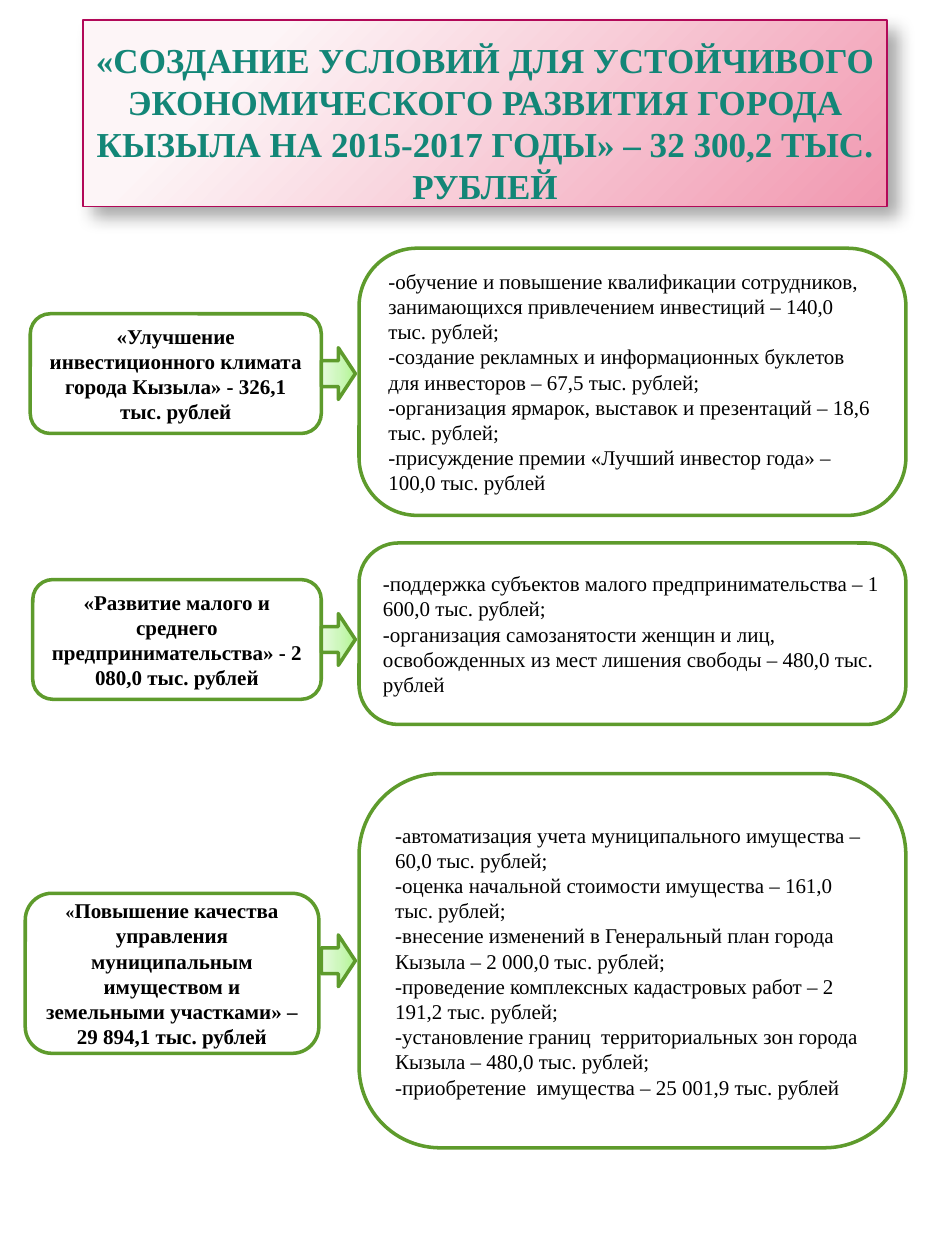
from dataclasses import dataclass

from lxml.etree import fromstring
from pptx import Presentation
from pptx.dml.color import RGBColor
from pptx.enum.shapes import MSO_SHAPE
from pptx.enum.text import MSO_ANCHOR, MSO_AUTO_SIZE, PP_ALIGN
from pptx.oxml.ns import nsdecls
from pptx.util import Inches, Pt


@dataclass(frozen=True)
class Theme:
    """Colours, type sizes and line widths of the slide."""
    font: str = "Times New Roman"
    title_size: float = 20
    body_size: float = 12
    quote_size: float = 10.5
    title_color: str = "138677"
    title_border: str = "B20858"
    text_color: str = "000000"
    border: str = "5E9B2C"
    background: str = "FFFFFF"
    border_width: float = 2
    title_border_width: float = 0.75
    title_stops: tuple = ((20, "FDF5F7"), (100, "F198B0"))
    arrow_stops: tuple = ((0, "B2F592"), (50, "CEF7BD"), (100, "E7FADF"))


@dataclass(frozen=True)
class Program:
    """One row: a summary box, an arrow and a box of details, in percent."""
    summary: str
    summary_box: tuple
    arrow_center: float
    detail_top: float
    detail_height: float
    details: tuple


THEME = Theme()
SLIDE_WIDTH, SLIDE_HEIGHT = Inches(7.5), Inches(10)
TITLE = ("«СОЗДАНИЕ УСЛОВИЙ ДЛЯ УСТОЙЧИВОГО ЭКОНОМИЧЕСКОГО РАЗВИТИЯ ГОРОДА "
         "КЫЗЫЛА НА 2015-2017 ГОДЫ» – 32 300,2 ТЫС. РУБЛЕЙ")
TITLE_BOX = (8.8, 1.6, 85.07, 14.8)
DETAIL_LEFT, DETAIL_WIDTH = 38, 57.87
ARROW_LEFT, ARROW_WIDTH, ARROW_HEIGHT = 33.07, 5.47, 2.7
PROGRAMS = (
    Program(
        "«Улучшение инвестиционного климата города Кызыла» - 326,1 тыс. рублей",
        (3.2, 24.9, 30.8, 9.5), 29.65, 19.7, 21.2,
        ("-обучение и повышение квалификации сотрудников, занимающихся "
         "привлечением инвестиций – 140,0 тыс. рублей;",
         "-создание рекламных и информационных буклетов для инвесторов – 67,5 тыс. рублей;",
         "-организация ярмарок, выставок и презентаций – 18,6 тыс. рублей;",
         "-присуждение премии «Лучший инвестор года» – 100,0 тыс. рублей")),
    Program(
        "«Развитие малого и среднего предпринимательства» - 2 080,0 тыс. рублей",
        (3.47, 46, 30.53, 9.5), 50.75, 43.1, 14.4,
        ("-поддержка субъектов малого предпринимательства – 1 600,0 тыс. рублей;",
         "-организация самозанятости женщин и лиц, освобожденных из мест "
         "лишения свободы – 480,0 тыс. рублей")),
    Program(
        "Повышение качества управления муниципальным имуществом и земельными "
        "участками» – 29 894,1 тыс. рублей",
        (2.67, 70.9, 31.07, 12.7), 76.25, 61.4, 29.7,
        ("-автоматизация учета муниципального имущества – 60,0 тыс. рублей;",
         "-оценка начальной стоимости имущества – 161,0 тыс. рублей;",
         "-внесение изменений в Генеральный план города Кызыла – 2 000,0 тыс. рублей;",
         "-проведение комплексных кадастровых работ – 2 191,2 тыс. рублей;",
         "-установление границ  территориальных зон города Кызыла – 480,0 тыс. рублей;",
         "-приобретение  имущества – 25 001,9 тыс. рублей")),
)


def place(box):
    """Turn percentages of the slide into left, top, width and height."""
    sides = (SLIDE_WIDTH, SLIDE_HEIGHT) * 2
    return [round(side * share / 100) for side, share in zip(sides, box)]


def set_border(shape, color, width):
    """Give the shape a solid outline."""
    shape.line.color.rgb = RGBColor.from_string(color)
    shape.line.width = Pt(width)


def set_gradient(shape, stops, direction):
    """Fill the shape with a gradient of the given stops and direction."""
    marks = "".join(
        f'<a:gs pos="{position * 1000}"><a:srgbClr val="{color}"/></a:gs>'
        for position, color in stops)
    gradient = fromstring(
        f'<a:gradFill {nsdecls("a")} rotWithShape="1">'
        f"<a:gsLst>{marks}</a:gsLst>{direction}</a:gradFill>")
    shape.fill.background()
    properties = shape.element.spPr
    properties.replace(properties.find("{*}noFill"), gradient)


def format_run(run, size, color, bold):
    """Set the typeface, size, colour and weight of a run."""
    run.font.name = THEME.font
    run.font.size = Pt(size)
    run.font.bold = bold
    run.font.color.rgb = RGBColor.from_string(color)


def format_text(text_frame, size, color, bold, alignment):
    """Format every paragraph and run of a text frame."""
    text_frame.word_wrap = True
    for paragraph in text_frame.paragraphs:
        paragraph.alignment = alignment
        for run in paragraph.runs:
            format_run(run, size, color, bold)


def add_title(slide):
    """Turn the title placeholder into a shaded banner."""
    title = slide.shapes.title
    title.left, title.top, title.width, title.height = place(TITLE_BOX)
    set_gradient(title, THEME.title_stops,
                 '<a:path path="circle"><a:fillToRect l="-15000" t="-15000" '
                 'r="115000" b="115000"/></a:path>')
    set_border(title, THEME.title_border, THEME.title_border_width)
    title.element.spPr.append(fromstring(
        f'<a:effectLst {nsdecls("a")}><a:outerShdw blurRad="{Pt(10.2)}" '
        f'dist="{Pt(8)}" dir="2700000" algn="tl" rotWithShape="0">'
        '<a:srgbClr val="000000"><a:alpha val="35000"/></a:srgbClr>'
        "</a:outerShdw></a:effectLst>"))
    text_frame = title.text_frame
    text_frame.text = TITLE
    text_frame.auto_size = MSO_AUTO_SIZE.NONE
    text_frame.vertical_anchor = MSO_ANCHOR.BOTTOM
    text_frame.margin_left = text_frame.margin_right = Inches(0.05)
    text_frame.margin_top = text_frame.margin_bottom = 0
    format_text(text_frame, THEME.title_size, THEME.title_color, True, PP_ALIGN.CENTER)


def add_box(slide, box, text, bold, alignment, rounding):
    """Add an outlined rounded box with text."""
    shape = slide.shapes.add_shape(MSO_SHAPE.ROUNDED_RECTANGLE, *place(box))
    shape.adjustments[0] = rounding
    shape.shadow.inherit = False
    shape.fill.background()
    set_border(shape, THEME.border, THEME.border_width)
    shape.text_frame.text = text
    shape.text_frame.vertical_anchor = MSO_ANCHOR.MIDDLE
    format_text(shape.text_frame, THEME.body_size, THEME.text_color, bold, alignment)
    return shape


def add_arrow(slide, center):
    """Add a block arrow pointing right at the given height."""
    box = (ARROW_LEFT, center - ARROW_HEIGHT / 2, ARROW_WIDTH, ARROW_HEIGHT)
    arrow = slide.shapes.add_shape(MSO_SHAPE.DOWN_ARROW, *place(box))
    arrow.rotation = 270
    arrow.shadow.inherit = False
    set_gradient(arrow, THEME.arrow_stops, '<a:lin ang="16200000" scaled="0"/>')
    set_border(arrow, THEME.border, THEME.border_width)


def add_program(slide, program):
    """Add one row and return its summary box."""
    detail_box = (DETAIL_LEFT, program.detail_top, DETAIL_WIDTH, program.detail_height)
    add_box(slide, detail_box, "\n".join(program.details), False, PP_ALIGN.LEFT, 0.217)
    summary = add_box(slide, program.summary_box, program.summary, True,
                      PP_ALIGN.CENTER, 0.167)
    add_arrow(slide, program.arrow_center)
    return summary


def add_small_quote(shape):
    """Open the text of a box with a smaller quotation mark."""
    paragraph = shape.text_frame.paragraphs[0]
    body = paragraph.runs[0]
    quote = paragraph.add_run()
    quote.text = "«"
    format_run(quote, THEME.quote_size, THEME.text_color, True)
    body._r.addprevious(quote._r)


def main():
    """Build the slide and save it."""
    presentation = Presentation()
    presentation.slide_width, presentation.slide_height = SLIDE_WIDTH, SLIDE_HEIGHT
    slide = presentation.slides.add_slide(presentation.slide_layouts[5])
    slide.background.fill.solid()
    slide.background.fill.fore_color.rgb = RGBColor.from_string(THEME.background)
    add_title(slide)
    summaries = [add_program(slide, program) for program in PROGRAMS]
    add_small_quote(summaries[-1])
    presentation.save("out.pptx")


if __name__ == "__main__":
    main()
